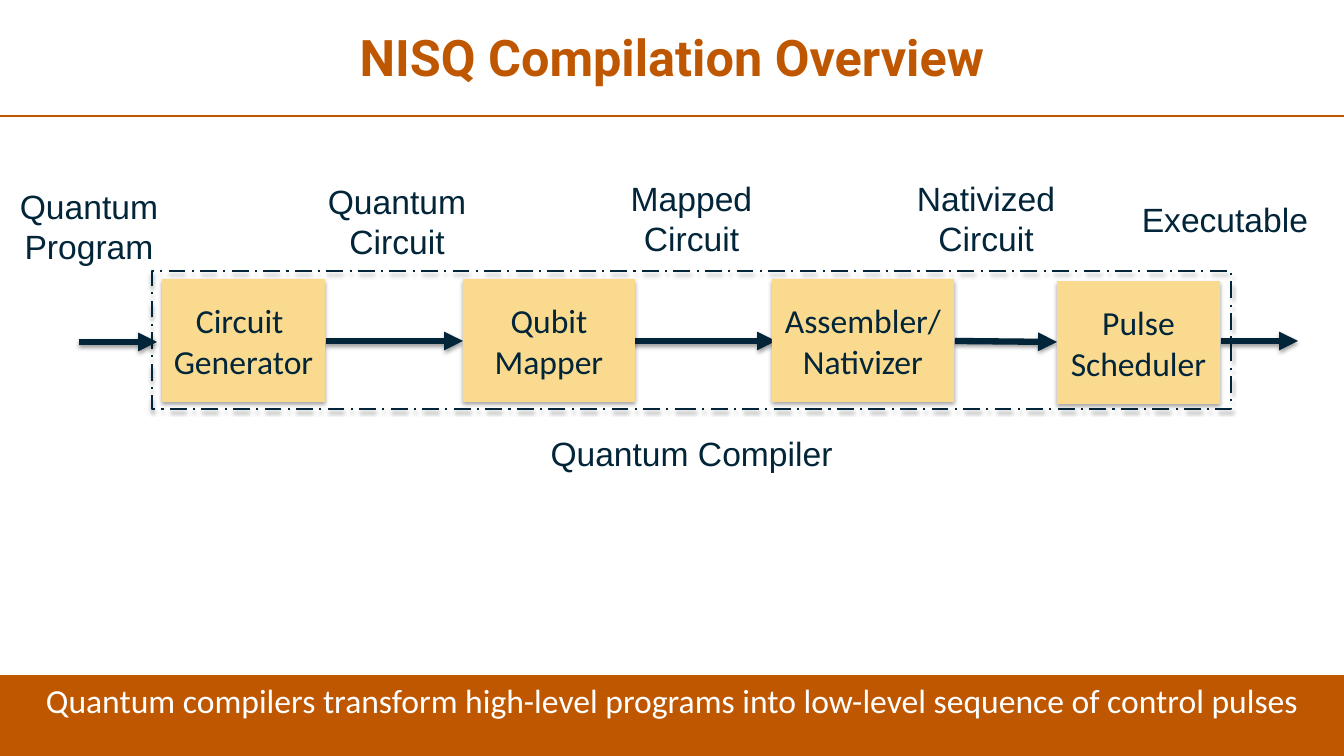
import pptx
import pptx.dml.color
import pptx.enum.dml
import pptx.enum.shapes
import pptx.enum.text
import pptx.oxml.ns
import pptx.util
from lxml import etree

EMU_PER_PX = 914400 / 100.8
COLORS = {"orange": "BF5700", "title": "BE5700", "navy": "022539",
          "sand": "FADA8F", "white": "FFFFFF", "black": "000000"}
ANCHOR = pptx.enum.text.MSO_ANCHOR
RECTANGLE = pptx.enum.shapes.MSO_SHAPE.RECTANGLE
STRAIGHT = pptx.enum.shapes.MSO_CONNECTOR.STRAIGHT
qn = pptx.oxml.ns.qn


def px(value):
    return pptx.util.Emu(round(value * EMU_PER_PX))


def color(name):
    return pptx.dml.color.RGBColor.from_string(COLORS[name])


class SlideBuilder:
    def __init__(self, page):
        self.page = page
        self.text_size = 24
        self.box_font = "Calibri"
        self.label_font = "Arial"

    def fill_text(self, shape, lines, font, ink, size=None, bold=False, anchor=ANCHOR.TOP):
        frame = shape.text_frame
        frame.word_wrap = True
        frame.auto_size = pptx.enum.text.MSO_AUTO_SIZE.NONE
        frame.vertical_anchor = anchor
        for index, line in enumerate(lines):
            para = frame.add_paragraph() if index else frame.paragraphs[0]
            para.alignment = pptx.enum.text.PP_ALIGN.CENTER
            span = para.add_run()
            span.text = line
            span.font.name = font
            span.font.size = pptx.util.Pt(size or self.text_size)
            span.font.bold = bold
            span.font.color.rgb = color(ink)

    def effects(self, shape, opacity=0, distance=0):
        properties = shape._element.spPr
        effect_list = etree.SubElement(properties, qn("a:effectLst"))
        if opacity:
            shadow = etree.SubElement(
                effect_list, qn("a:outerShdw"), blurRad="40000",
                dist=str(distance), dir="5400000", rotWithShape="0")
            tone = etree.SubElement(shadow, qn("a:srgbClr"), val=COLORS["black"])
            etree.SubElement(tone, qn("a:alpha"), val=str(opacity * 1000))

    def title(self, text, left, top, width, height):
        shape = self.page.shapes.title
        shape.left, shape.top = px(left), px(top)
        shape.width, shape.height = px(width), px(height)
        self.fill_text(shape, [text], "Roboto", "title", 36, True, ANCHOR.MIDDLE)
        shape.text_frame.paragraphs[0].line_spacing = 0.9

    def line(self, start, end, ink, weight):
        shape = self.page.shapes.add_connector(STRAIGHT, *map(px, (*start, *end)))
        shape.line.color.rgb = color(ink)
        shape.line.width = pptx.util.Pt(weight)
        return shape

    def rule(self, start, end):
        self.effects(self.line(start, end, "orange", 1.5))

    def arrow(self, start, end):
        shape = self.line(start, end, "navy", 4.5)
        outline = shape._element.spPr.find(qn("a:ln"))
        etree.SubElement(outline, qn("a:tailEnd"), type="triangle")
        self.effects(shape, 38, 20000)

    def rectangle(self, area, fill):
        shape = self.page.shapes.add_shape(RECTANGLE, *map(px, area))
        shape.fill.solid()
        shape.fill.fore_color.rgb = color(fill)
        shape.line.fill.background()
        return shape

    def stage(self, lines, *area):
        shape = self.rectangle(area, "sand")
        self.effects(shape, 35, 23000)
        self.fill_text(shape, lines, self.box_font, "navy", anchor=ANCHOR.MIDDLE)

    def banner(self, text, *area):
        shape = self.rectangle(area, "orange")
        self.effects(shape)
        self.fill_text(shape, [text], self.box_font, "white")

    def frame(self, *area):
        shape = self.page.shapes.add_shape(RECTANGLE, *map(px, area))
        shape.fill.background()
        shape.line.color.rgb = color("navy")
        shape.line.width = pptx.util.Pt(1.5)
        shape.line.dash_style = pptx.enum.dml.MSO_LINE.LONG_DASH_DOT
        self.effects(shape, 35, 23000)

    def label(self, lines, left, top, width):
        height = 10 + 41 * len(lines)
        shape = self.page.shapes.add_textbox(*map(px, (left, top, width, height)))
        self.fill_text(shape, lines, self.label_font, "navy")


def main():
    deck = pptx.Presentation()
    deck.slide_width, deck.slide_height = px(1344), px(756)
    slide = SlideBuilder(deck.slides.add_slide(deck.slide_layouts[5]))

    slide.title("NISQ Compilation Overview", 9, 4, 1326, 112)
    slide.rule((0, 116), (1344, 116))
    slide.banner("Quantum compilers transform high-level programs into "
                 "low-level sequence of control pulses", 0, 675, 1344, 81)

    slide.frame(152, 271, 1079, 138)
    for start, end in [((79, 342), (157, 342)), ((326, 341), (463, 341)),
                       ((550, 341), (776, 341)), ((955, 341), (1057, 342)),
                       ((1221, 341), (1298, 341))]:
        slide.arrow(start, end)

    for lines, left, top, width in [
            (["Circuit ", "Generator"], 162, 279, 163),
            (["Qubit", "Mapper"], 463, 279, 172),
            (["Assembler/Nativizer"], 772, 279, 182),
            (["Pulse", "Scheduler"], 1057, 281, 163)]:
        slide.stage(lines, left, top, width, 123)

    for lines, left, top, width in [
            (["Quantum ", "Program"], 9, 181, 160),
            (["Quantum", "Circuit"], 293, 176, 208),
            (["Mapped", "Circuit"], 613, 173, 157),
            (["Nativized", "Circuit"], 895, 173, 182),
            (["Executable"], 1121, 194, 208),
            (["Quantum Compiler"], 539, 428, 305)]:
        slide.label(lines, left, top, width)

    deck.save("out.pptx")


if __name__ == "__main__":
    main()
